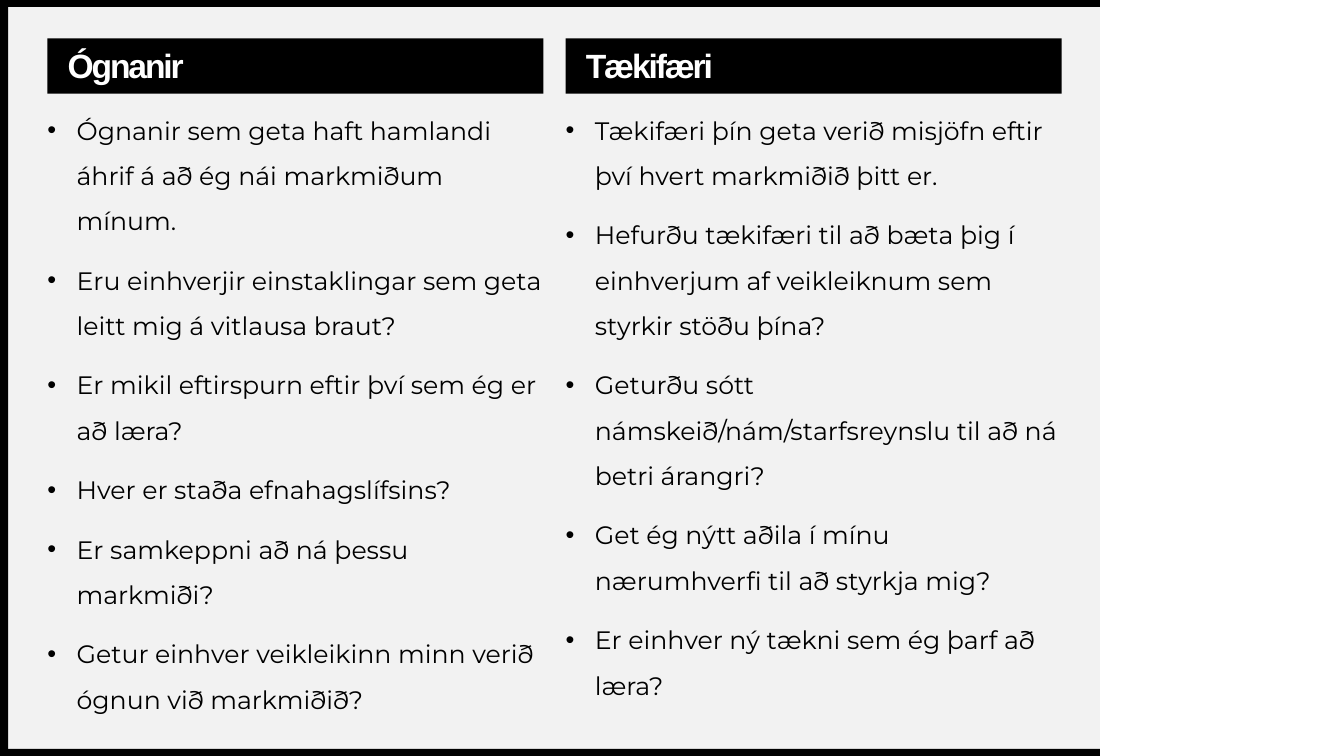
"""Build a two-column slide on threats and opportunities."""
from dataclasses import dataclass

from lxml import etree
from pptx import Presentation
from pptx import util as u
from pptx.dml import color
from pptx.enum import shapes, text
from pptx.oxml import ns


@dataclass(frozen=True)
class Theme:
    """Hold colours, fonts and type sizes."""
    ink: str = "000000"
    panel: str = "F2F2F2"
    light: str = "FFFFFF"
    head: str = "Arial"
    body: str = "Montserrat"
    big: int = 24
    small: int = 18


@dataclass(frozen=True)
class Box:
    """Describe a filled rectangle in inches."""
    left: float
    top: float
    width: float
    height: float
    fill: str


@dataclass(frozen=True)
class Column:
    """Describe a heading with its bullet points."""
    title: str
    points: tuple[str, ...]


LOOK = Theme()
WIDE, HIGH = 13.33, 7.5
EDGE, RIM = 10.91, 0.07
LEFT, STEP, SPAN = 0.47, 5.14, 4.92

FRAME = (
    Box(0.08, RIM, EDGE - 0.08, HIGH - 2 * RIM, LOOK.panel),
    Box(0, HIGH - RIM, EDGE, RIM, LOOK.ink),
    Box(0, 0, EDGE, RIM, LOOK.ink),
    Box(0, 0, 0.08, HIGH, LOOK.ink),
)
COLUMNS = (
    Column("Ógnanir", (
        "Ógnanir sem geta haft hamlandi áhrif á að ég nái markmiðum mínum.",
        "Eru einhverjir einstaklingar sem geta leitt mig á vitlausa braut?",
        "Er mikil eftirspurn eftir því sem ég er að læra?",
        "Hver er staða efnahagslífsins?",
        "Er samkeppni að ná þessu markmiði?",
        "Getur einhver veikleikinn minn verið ógnun við markmiðið?",
    )),
    Column("Tækifæri", (
        "Tækifæri þín geta verið misjöfn eftir því hvert markmiðið þitt er.",
        "Hefurðu tækifæri til að bæta þig í einhverjum af veikleiknum sem "
        "styrkir stöðu þína?",
        "Geturðu sótt námskeið/nám/starfsreynslu til að ná betri árangri?",
        "Get ég nýtt aðila í mínu nærumhverfi til að styrkja mig?",
        "Er einhver ný tækni sem ég þarf að læra?",
    )),
)
HEAD = {"name": LOOK.head, "size": u.Pt(LOOK.big), "bold": True}
BODY = {"name": LOOK.body, "size": u.Pt(LOOK.small), "bold": False}
TIGHT = {"line_spacing": 0.9, "space_before": u.Pt(10),
         "alignment": text.PP_ALIGN.LEFT}
LOOSE = TIGHT | {"line_spacing": 1.5}
INSET = {"margin_left": 0, "margin_top": 0, "margin_right": 0,
         "margin_bottom": 0, "word_wrap": True,
         "vertical_anchor": text.MSO_ANCHOR.TOP}
BAR = INSET | {"margin_left": u.Inches(0.2), "margin_top": u.Inches(0.04),
               "vertical_anchor": text.MSO_ANCHOR.MIDDLE}


def apply(item: object, values: dict) -> None:
    """Set each format value on an item."""
    for key, value in values.items():
        setattr(item, key, value)


def draw_box(slide, box: Box):
    """Draw a plain filled rectangle."""
    area = map(u.Inches, (box.left, box.top, box.width, box.height))
    shape = slide.shapes.add_shape(shapes.MSO_SHAPE.RECTANGLE, *area)
    shape.shadow.inherit = False
    shape.fill.solid()
    shape.fill.fore_color.rgb = color.RGBColor.from_string(box.fill)
    shape.line.fill.background()
    return shape


def write(para, words: str, font: dict, flow: dict, tint: str):
    """Write one styled run and return it."""
    run = para.add_run()
    run.text = words
    apply(run.font, font)
    run.font.color.rgb = color.RGBColor.from_string(tint)
    apply(para, flow)
    return run


def add_dot(para) -> None:
    """Give a paragraph a hanging bullet."""
    props = para._p.get_or_add_pPr()
    indent = u.Inches(0.29)
    props.set("marL", str(indent))
    props.set("indent", str(-indent))
    etree.SubElement(props, ns.qn("a:buFont"), typeface=LOOK.head)
    etree.SubElement(props, ns.qn("a:buChar"), char="•")


def draw_column(slide, column: Column, left: float) -> None:
    """Draw a heading bar and its bullet list."""
    bar = draw_box(slide, Box(left, 0.38, SPAN, 0.55, LOOK.ink)).text_frame
    apply(bar, BAR)
    run = write(bar.paragraphs[0], column.title, HEAD, TIGHT, LOOK.light)
    run.font._element.set("spc", "-150")

    area = map(u.Inches, (left, 0.99, SPAN, 2.76))
    frame = slide.shapes.add_textbox(*area).text_frame
    apply(frame, INSET)
    for rank, point in enumerate(column.points):
        para = frame.add_paragraph() if rank else frame.paragraphs[0]
        write(para, point, BODY, LOOSE, LOOK.ink)
        add_dot(para)


def main() -> None:
    """Build and save the slide."""
    deck = Presentation()
    apply(deck, {"slide_width": u.Inches(WIDE), "slide_height": u.Inches(HIGH)})
    slide = deck.slides.add_slide(deck.slide_layouts[6])
    for box in FRAME:
        draw_box(slide, box)
    for rank, column in enumerate(COLUMNS):
        draw_column(slide, column, LEFT + rank * STEP)
    deck.save("out.pptx")


if __name__ == "__main__":
    main()
